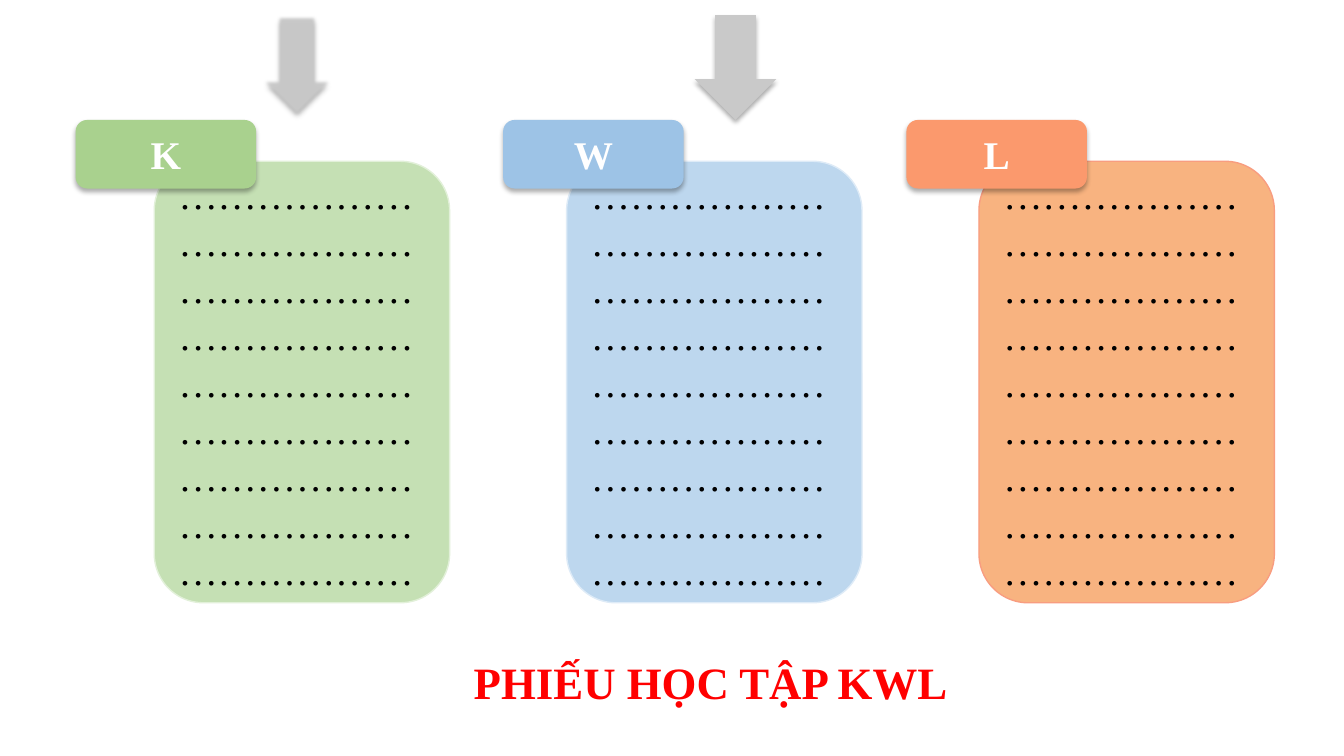
from lxml import etree
from pptx import Presentation
from pptx.dml.color import RGBColor
from pptx.enum import shapes, text
from pptx.oxml.ns import qn
from pptx.util import Inches, Pt

SHAPE = shapes.MSO_SHAPE
ALIGN = text.PP_ALIGN
FONT = "Times New Roman"
DOTS = "…" * 54

# letter, tag left, tag fill, panel fill, panel line
COLUMNS = [
    ("K", 0.75, "A9D18E", "C5E0B4", "E2F0D9"),
    ("W", 4.99, "9DC3E6", "BDD7EE", "DEEBF7"),
    ("L", 8.99, "FB996D", "F8B380", "F89D80"),
]
PANEL_LEFT, PANEL_STEP = 1.53, 4.09


def rgb(value):
    return RGBColor.from_string(value)


def add_box(s, kind, box, fill, line=None):
    sp = s.shapes.add_shape(kind, *map(Inches, box))
    sp.shadow.inherit = False
    sp.fill.solid()
    sp.fill.fore_color.rgb = rgb(fill)
    if line:
        sp.line.color.rgb = rgb(line)
        sp.line.width = Pt(1)
    else:
        sp.line.fill.background()
    return sp


def write(sp, words, color, align=ALIGN.CENTER, **font):
    tf = sp.text_frame
    tf.word_wrap = True
    tf.vertical_anchor = text.MSO_ANCHOR.MIDDLE
    p = tf.paragraphs[0]
    p.alignment = align
    r = p.add_run()
    r.text = words
    r.font.color.rgb = rgb(color)
    for name, value in {"name": FONT, "size": Pt(28), **font}.items():
        setattr(r.font, name, value)


def add_effects(sp, soft_edge=None):
    """Give a soft shadow below the shape and, if asked, blurred edges."""
    effects = sp._element.spPr.find(qn("a:effectLst"))
    shadow = etree.SubElement(
        effects, qn("a:outerShdw"), blurRad=str(Pt(3.5)), dist=str(Pt(2.2)),
        dir="5400000", algn="ctr", rotWithShape="0")
    color = etree.SubElement(shadow, qn("a:srgbClr"), val="000000")
    etree.SubElement(color, qn("a:alpha"), val="32000")
    if soft_edge:
        etree.SubElement(effects, qn("a:softEdge"), rad=str(Pt(soft_edge)))


def add_column(s, index, letter, tag_left, tag_fill, panel_fill, panel_line):
    left = PANEL_LEFT + index * PANEL_STEP
    panel = add_box(s, SHAPE.ROUNDED_RECTANGLE, (left, 1.6, 2.93, 4.38),
                    panel_fill, panel_line)
    write(panel, DOTS, "000000", ALIGN.JUSTIFY)
    tag = add_box(s, SHAPE.ROUNDED_RECTANGLE, (tag_left, 1.19, 1.79, 0.68), tag_fill)
    add_effects(tag)
    write(tag, letter, "FFFFFF", bold=True)


def add_arrow(s, left, soft_edge=None):
    arrow = add_box(s, SHAPE.DOWN_ARROW, (left, 0.15, 0.81, 1.04), "C9C9C9")
    add_effects(arrow, soft_edge)


def main():
    prs = Presentation()
    prs.slide_width, prs.slide_height = Inches(13.33), Inches(7.5)
    s = prs.slides.add_slide(prs.slide_layouts[6])
    for index, column in enumerate(COLUMNS):
        add_column(s, index, *column)
    title = add_box(s, SHAPE.FLOWCHART_ALTERNATE_PROCESS,
                    (2.93, 6.34, 8.24, 0.84), "FFFFFF")
    write(title, "PHIẾU HỌC TẬP KWL", "FF0000", size=Pt(32), bold=True)
    add_arrow(s, 2.54, soft_edge=2.5)
    add_arrow(s, 6.89)
    prs.save("out.pptx")


if __name__ == "__main__":
    main()
